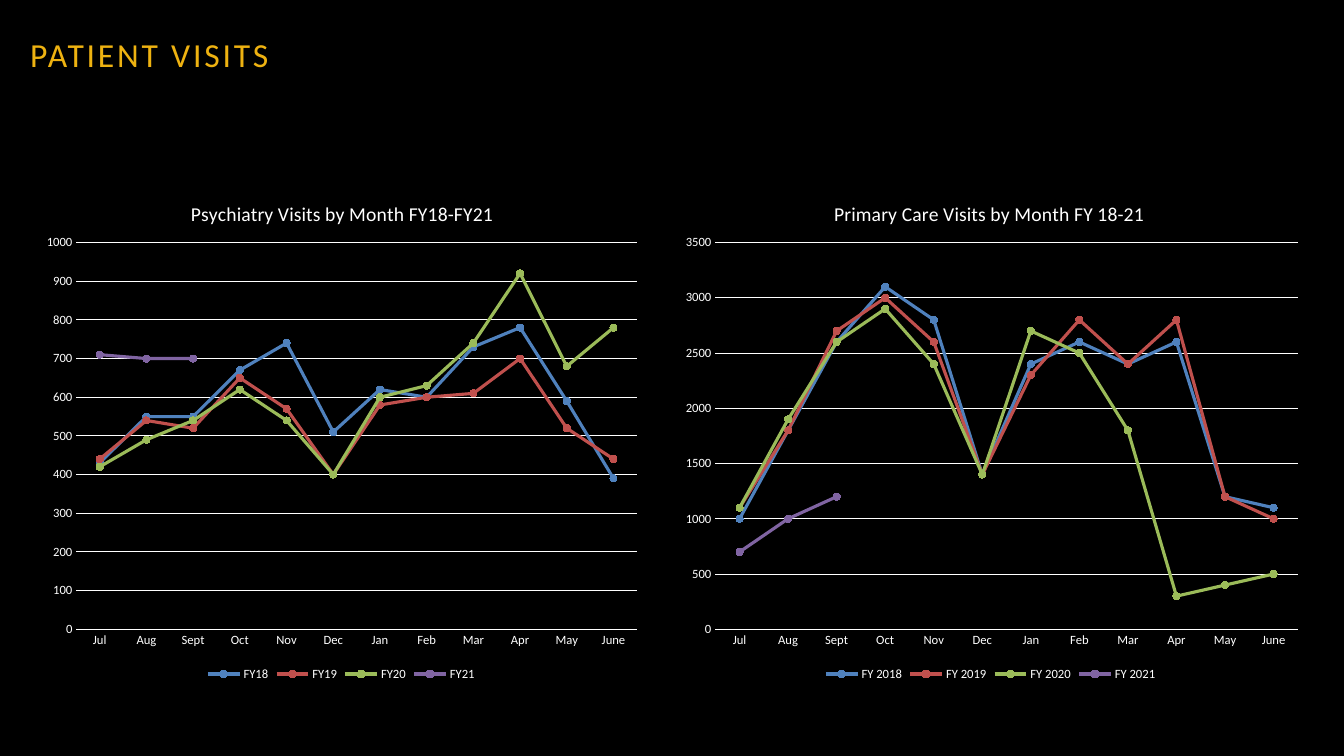
from dataclasses import dataclass

from lxml.etree import SubElement
from pptx import Presentation
from pptx.chart.data import CategoryChartData
from pptx.dml.color import RGBColor
from pptx.enum.chart import (XL_CHART_TYPE, XL_LEGEND_POSITION,
                             XL_MARKER_STYLE, XL_TICK_MARK)
from pptx.enum.text import MSO_ANCHOR
from pptx.oxml import parse_xml
from pptx.oxml.ns import nsdecls
from pptx.util import Inches, Pt


@dataclass(frozen=True)
class Theme:
    font: str = "Calibri"
    back: RGBColor = RGBColor(0, 0, 0)
    ink: RGBColor = RGBColor(255, 255, 255)
    gold: RGBColor = RGBColor(0xEE, 0xB2, 0x11)
    years: tuple = ("4F81BD", "C0504D", "9BBB59", "8064A2")
    head: int = 24
    title: int = 14
    label: int = 9


THEME = Theme()
MONTHS = ("Jul", "Aug", "Sept", "Oct", "Nov", "Dec",
          "Jan", "Feb", "Mar", "Apr", "May", "June")
PSYCH = {
    "FY18": (430, 550, 550, 670, 740, 510, 620, 600, 730, 780, 590, 390),
    "FY19": (440, 540, 520, 650, 570, 400, 580, 600, 610, 700, 520, 440),
    "FY20": (420, 490, 540, 620, 540, 400, 600, 630, 740, 920, 680, 780),
    "FY21": (710, 700, 700),
}
PRIMARY = {
    "FY 2018": (1000, 1800, 2600, 3100, 2800, 1400,
                2400, 2600, 2400, 2600, 1200, 1100),
    "FY 2019": (1100, 1800, 2700, 3000, 2600, 1400,
                2300, 2800, 2400, 2800, 1200, 1000),
    "FY 2020": (1100, 1900, 2600, 2900, 2400, 1400,
                2700, 2500, 1800, 300, 400, 500),
    "FY 2021": (700, 1000, 1200),
}


def style(font, size, color=THEME.ink):
    font.name = THEME.font
    font.size = Pt(size)
    font.bold = False
    font.color.rgb = color


def rule(line, color, width):
    line.color.rgb = color
    line.width = Pt(width)


def place(parent, **spots):
    """Fix a chart part at fractions of the chart area."""
    for old in parent.findall("c:layout", parent.nsmap):
        parent.remove(old)
    layout = parse_xml(f"<c:layout {nsdecls('c')}/>")
    manual = SubElement(layout, layout.tag.replace("layout", "manualLayout"))
    tags = {"xMode": "edge", "yMode": "edge", **spots}
    if "w" in spots:
        tags = {"layoutTarget": "inner", **tags}
    for tag, val in tags.items():
        SubElement(manual, layout.tag.replace("layout", tag), val=str(val))
    return layout


def add_head(slide, text):
    box = slide.shapes.add_textbox(0, 0, Inches(8.41), Inches(1.08))
    box.fill.solid()
    box.fill.fore_color.rgb = THEME.back
    frame = box.text_frame
    frame.word_wrap = True
    frame.vertical_anchor = MSO_ANCHOR.MIDDLE
    frame.margin_left = Inches(0.3)
    frame.text = text
    run = frame.paragraphs[0].runs[0]
    style(run.font, THEME.head, THEME.gold)
    run.font._element.set("spc", "200")


def add_title(chart, text):
    title = chart.chart_title
    title.text_frame.text = text
    style(title.text_frame.paragraphs[0].runs[0].font, THEME.title)
    title.include_in_layout = False
    node = title._element
    node.tx.addnext(place(node, x=0.25, y=0.04))


def add_axes(chart, top, step):
    months, visits = chart.category_axis, chart.value_axis
    for axis in (months, visits):
        axis.major_tick_mark = axis.minor_tick_mark = XL_TICK_MARK.NONE
        style(axis.tick_labels.font, THEME.label)
    rule(months.format.line, THEME.ink, 0.75)
    visits.format.line.fill.background()
    visits.minimum_scale, visits.maximum_scale = 0, top
    visits.major_unit = step
    visits.has_major_gridlines = True
    rule(visits.major_gridlines.format.line, THEME.ink, 0.75)


def add_lines(slide, title, data, left, width, top, step):
    """Add a line chart of visits, one line for each fiscal year."""
    table = CategoryChartData()
    table.categories = MONTHS
    for name, visits in data.items():
        table.add_series(name, visits + (None,) * (len(MONTHS) - len(visits)))
    chart = slide.shapes.add_chart(
        XL_CHART_TYPE.LINE_MARKERS, Inches(left), Inches(1.75),
        Inches(width), Inches(5.05), table).chart
    style(chart.font, THEME.label)
    add_title(chart, title)
    add_axes(chart, top, step)
    chart.has_legend = True
    chart.legend.position = XL_LEGEND_POSITION.BOTTOM
    chart.legend.include_in_layout = False
    style(chart.legend.font, THEME.label)
    plot = chart.plots[0]
    plot.vary_by_categories = False
    for year, code in zip(plot.series, THEME.years):
        color = RGBColor.from_string(code)
        year.smooth = False
        rule(year.format.line, color, 2.25)
        mark = year.marker
        mark.style, mark.size = XL_MARKER_STYLE.CIRCLE, 5
        mark.format.fill.solid()
        mark.format.fill.fore_color.rgb = color
        rule(mark.format.line, color, 0.75)
    area = chart._chartSpace.chart.plotArea
    area.insert(0, place(area, x=0.07, y=0.13, w=0.91, h=0.76))


def main():
    deck = Presentation()
    deck.slide_width, deck.slide_height = Inches(13.33), Inches(7.5)
    slide = deck.slides.add_slide(deck.slide_layouts[6])
    slide.background.fill.solid()
    slide.background.fill.fore_color.rgb = THEME.back
    add_head(slide, "PATIENT VISITS")
    add_lines(slide, "Psychiatry Visits by Month FY18-FY21", PSYCH,
              left=0.33, width=6.11, top=1000, step=100)
    add_lines(slide, "Primary Care Visits by Month FY 18-21", PRIMARY,
              left=6.65, width=6.35, top=3500, step=500)
    deck.save("out.pptx")


if __name__ == "__main__":
    main()
